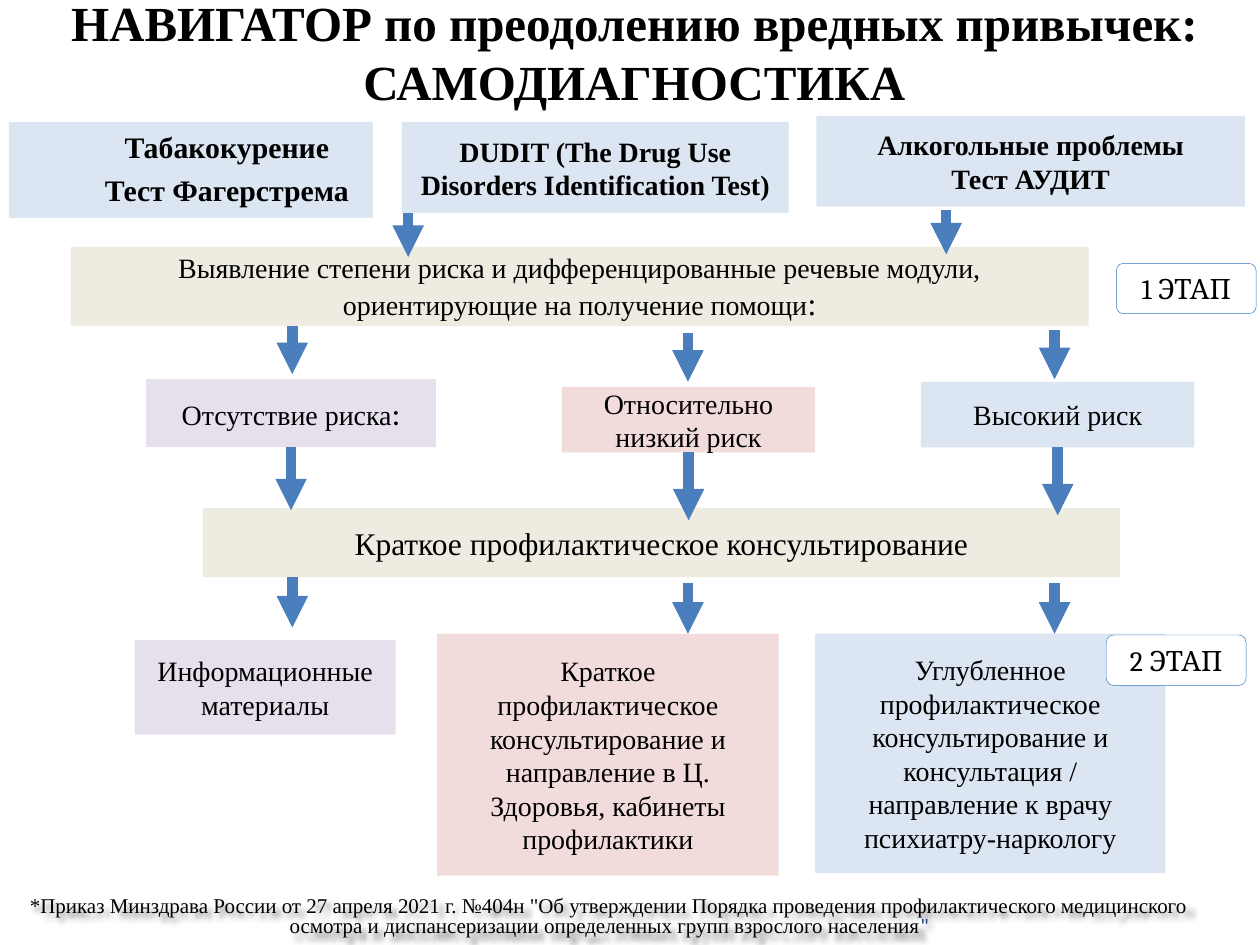
from lxml.etree import SubElement
from pptx import Presentation
from pptx.dml.color import RGBColor
from pptx.enum.shapes import MSO_CONNECTOR, MSO_SHAPE
from pptx.enum.text import MSO_ANCHOR, PP_ALIGN
from pptx.oxml.ns import qn
from pptx.util import Inches, Pt

COLORS = {
    "text": "000000", "blue": "DCE6F2", "beige": "EEECE1", "violet": "E6E0EC",
    "pink": "F2DCDB", "white": "FFFFFF", "arrow": "4B7EBC", "outline": "3172C4",
    "quote": "1F497D",
}
SERIF = "Times New Roman"
BOTTOM = 2


def color(name):
    return RGBColor.from_string(COLORS[name])


def add_run(paragraph, text, size=16, bold=False, font=SERIF, ink="text"):
    run = paragraph.add_run()
    run.text = text
    run.font.size = Pt(size)
    run.font.bold = bold
    run.font.name = font
    run.font.color.rgb = color(ink)


def write(shape, paragraphs, **style):
    """Fill the frame; a paragraph is a list of (text, own style) runs."""
    frame = shape.text_frame
    frame.word_wrap = True
    frame.vertical_anchor = MSO_ANCHOR.MIDDLE
    for index, runs in enumerate(paragraphs):
        paragraph = frame.add_paragraph() if index else frame.paragraphs[0]
        paragraph.alignment = PP_ALIGN.CENTER
        for text, own in runs:
            add_run(paragraph, text, **{**style, **own})
    return frame


def add_block(slide, box, fill, paragraphs, kind=MSO_SHAPE.RECTANGLE, **style):
    shape = slide.shapes.add_shape(kind, *map(Inches, box))
    shape.shadow.inherit = False
    shape.fill.solid()
    shape.fill.fore_color.rgb = color(fill)
    shape.line.fill.background()
    write(shape, paragraphs, **style)
    return shape


def add_text(slide, box, runs, **style):
    shape = slide.shapes.add_textbox(*map(Inches, box))
    write(shape, [runs], **style)
    return shape


def add_arrow(slide, x, top, bottom, source=None):
    """Draw a downward arrow, joined to the bottom of source if there is one."""
    if source is not None:
        x = (source.left + source.width // 2) / Inches(1)
    arrow = slide.shapes.add_connector(
        MSO_CONNECTOR.STRAIGHT, Inches(x), Inches(top), Inches(x), Inches(bottom))
    if source is not None:
        arrow.begin_connect(source, BOTTOM)
    arrow.line.color.rgb = color("arrow")
    arrow.line.width = Pt(6)
    SubElement(arrow.line._get_or_add_ln(), qn("a:tailEnd"), type="triangle")
    SubElement(arrow._element.spPr, qn("a:effectLst"))


def add_stage_label(slide, box, text):
    label = add_block(slide, box, "white", [[(text, {})]],
                      MSO_SHAPE.ROUNDED_RECTANGLE, font="Cambria")
    label.adjustments[0] = 0.145
    label.line.color.rgb = color("outline")
    label.line.width = Pt(0.25)


def add_tests(slide):
    tobacco = add_block(
        slide, (0.07, 0.97, 2.89, 0.76), "blue",
        [[("Табакокурение", {})], [("Тест Фагерстрема", {})]], size=17, bold=True)
    tobacco.text_frame.vertical_anchor = MSO_ANCHOR.TOP
    tobacco.text_frame.margin_left = Inches(0.67)
    for paragraph in tobacco.text_frame.paragraphs:
        paragraph.space_before = Pt(4.5)
    add_block(slide, (3.19, 0.97, 3.07, 0.72), "blue",
              [[("DUDIT (The Drug Use Disorders Identification Test)", {})]], bold=True)
    add_block(slide, (6.48, 0.92, 3.4, 0.72), "blue",
              [[("Алкогольные проблемы", {})], [("Тест АУДИТ", {})]], bold=True)


def add_risks(slide):
    levels = [
        ((1.16, 3.01, 2.3, 0.54), "violet",
         [("Отсутствие риска", {}), (":", {"size": 18, "font": "Calibri"})]),
        ((4.46, 3.07, 2.01, 0.52), "pink", [("Относительно низкий риск", {})]),
        ((7.31, 3.03, 2.17, 0.52), "blue", [("Высокий риск", {})]),
    ]
    return [add_block(slide, box, fill, [runs]) for box, fill, runs in levels]


def add_outcomes(slide):
    outcomes = [
        ((1.07, 5.08, 2.07, 0.75), "violet", "Информационные материалы"),
        ((3.47, 5.03, 2.71, 1.92), "pink",
         "Краткое профилактическое консультирование и направление в Ц. Здоровья, "
         "кабинеты профилактики"),
        ((6.47, 5.03, 2.78, 1.9), "blue",
         "Углубленное профилактическое консультирование и консультация / "
         "направление к врачу психиатру-наркологу"),
    ]
    for box, fill, text in outcomes:
        add_block(slide, box, fill, [[(text, {})]])


def add_footnote(slide, box):
    note = add_text(slide, box, [
        ('*Приказ Минздрава России от 27 апреля 2021 г. №404н "Об утверждении Порядка '
         "проведения профилактического медицинского осмотра и диспансеризации "
         "определенных групп взрослого населения", {}),
        ('"', {"font": "Calibri", "ink": "quote"})], size=12)
    note.text_frame.paragraphs[0].line_spacing = 0.8
    effects = SubElement(note._element.spPr, qn("a:effectLst"))
    shadow = SubElement(effects, qn("a:outerShdw"), blurRad=str(Pt(3)),
                        dist=str(Pt(3)), dir="2700000", algn="tl", rotWithShape="0")
    shade = SubElement(shadow, qn("a:srgbClr"), val=COLORS["text"])
    SubElement(shade, qn("a:alpha"), val="45000")


def add_arrows(slide, risks):
    free_arrows = [
        (3.24, 1.69, 2.04), (7.51, 1.67, 2.02),
        (2.32, 2.59, 2.97), (5.46, 2.64, 3.03), (8.37, 2.62, 3.01),
        (2.32, 4.58, 4.98), (5.46, 4.63, 5.03), (8.37, 4.63, 5.03),
    ]
    for x, top, bottom in free_arrows:
        add_arrow(slide, x, top, bottom)
    for risk, bottom in zip(risks, (4.05, 4.13, 4.09)):
        add_arrow(slide, 0, 0, bottom, risk)


def main():
    presentation = Presentation()
    presentation.slide_width = Inches(10)
    presentation.slide_height = Inches(7.5)
    slide = presentation.slides.add_slide(presentation.slide_layouts[6])

    add_text(slide, (0.07, 0, 9.93, 0.81),
             [("НАВИГАТОР по преодолению вредных привычек: САМОДИАГНОСТИКА", {})],
             size=28, bold=True)
    add_tests(slide)
    add_block(slide, (0.56, 1.96, 8.08, 0.63), "beige", [[
        ("Выявление степени риска и дифференцированные речевые модули, "
         "ориентирующие на получение помощи", {}), (":", {"size": 18})]])
    risks = add_risks(slide)
    add_block(slide, (1.61, 4.03, 7.28, 0.55), "beige",
              [[("Краткое профилактическое консультирование", {})]], size=18)
    add_outcomes(slide)
    add_arrows(slide, risks)
    add_stage_label(slide, (8.86, 2.09, 1.11, 0.4), "1 ЭТАП")
    add_stage_label(slide, (8.78, 5.04, 1.11, 0.4), "2 ЭТАП")
    add_footnote(slide, (0.07, 7.07, 9.53, 0.43))
    presentation.save("out.pptx")


if __name__ == "__main__":
    main()
